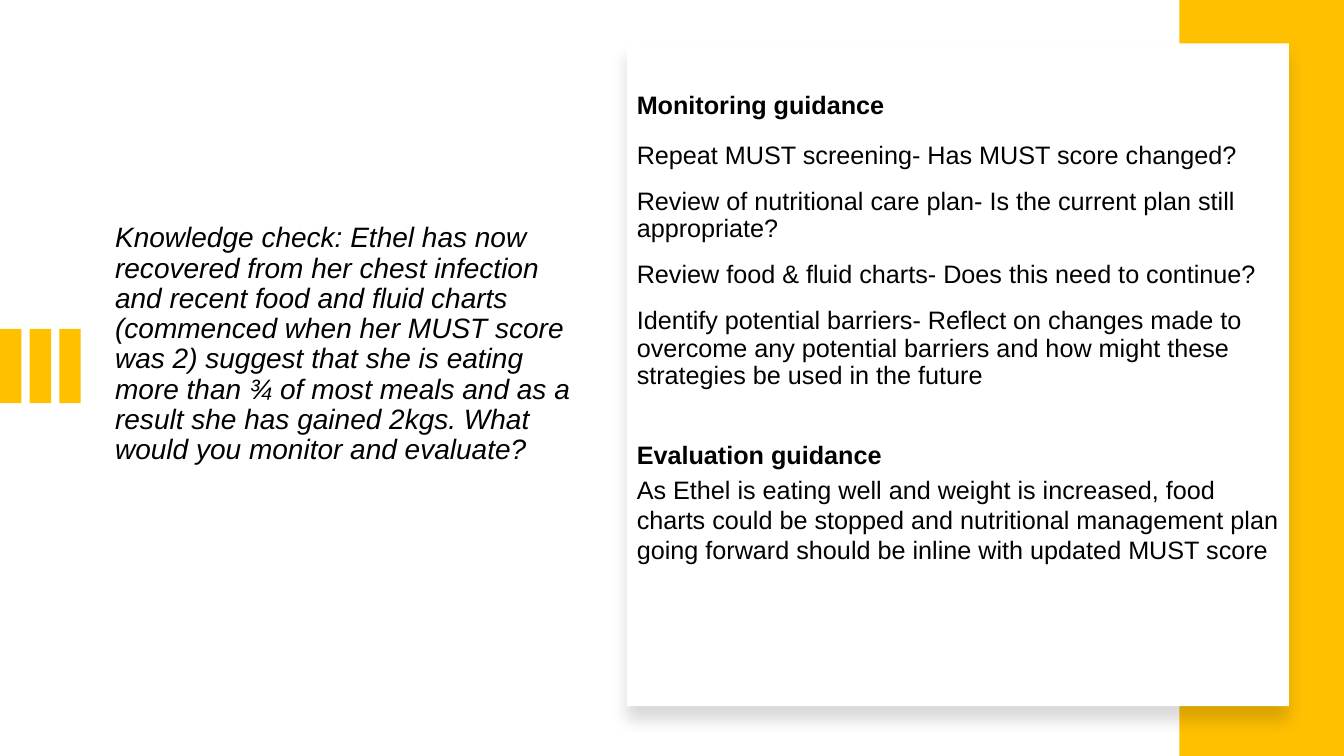
from lxml import etree
from pptx import Presentation
from pptx.dml.color import RGBColor
from pptx.enum.shapes import MSO_SHAPE as SHAPE
from pptx.enum.text import MSO_ANCHOR as ANCHOR, PP_ALIGN as ALIGN
from pptx.oxml import parse_xml
from pptx.oxml.ns import nsdecls, qn
from pptx.util import Pt

AMBER, WHITE, BLACK = "FFC000", "FFFFFF", "000000"
FONT = "Arial"

QUESTION = (
    "Knowledge check: Ethel has now recovered from her chest infection and "
    "recent food and fluid charts (commenced when her MUST score was 2) suggest "
    "that she is eating more than ¾ of most meals and as a result she has gained "
    "2kgs. What would you monitor and evaluate?"
)

# Text, bold, line spacing, space before
GUIDANCE = [
    ("Monitoring guidance", True, 1.0, 10),
    ("Repeat MUST screening- Has MUST score changed?", False, 1.0, 10),
    ("Review of nutritional care plan- Is the current plan still appropriate?",
     False, 0.9, 10),
    ("Review food & fluid charts- Does this need to continue?", False, 0.9, 10),
    ("Identify potential barriers- Reflect on changes made to overcome any "
     "potential barriers and how might these strategies be used in the future",
     False, 0.9, 10),
    ("Evaluation guidance", True, 2.0, 10),
    ("As Ethel is eating well and weight is increased, food charts could be "
     "stopped and nutritional management plan going forward should be inline "
     "with updated MUST score", False, 1.0, 0),
]


def rgb(value):
    return RGBColor.from_string(value)


def set_all(obj, formats):
    for name, value in formats.items():
        setattr(obj, name, value)


def add_rect(shapes, left, top, width, height, color):
    sp = shapes.add_shape(SHAPE.RECTANGLE, Pt(left), Pt(top), Pt(width), Pt(height))
    sp.shadow.inherit = False
    sp.fill.solid()
    sp.fill.fore_color.rgb = rgb(color)
    sp.line.fill.background()
    return sp


def add_soft_shadow(sp):
    effects = sp._element.spPr.find(qn("a:effectLst"))
    shadow = parse_xml(
        f'<a:outerShdw {nsdecls("a")} blurRad="{Pt(11)}" dist="{Pt(10)}" '
        'dir="5400000" algn="t" rotWithShape="0"/>')
    color = etree.SubElement(shadow, qn("a:srgbClr"), val=BLACK)
    etree.SubElement(color, qn("a:alpha"), val="15000")
    effects.append(shadow)


def set_paragraph(p, text, font, spacing):
    set_all(p, {"alignment": ALIGN.LEFT, **spacing})
    r = p.add_run()
    r.text = text
    set_all(r.font, {"name": FONT, **font})
    r.font.color.rgb = rgb(BLACK)


def place_question(s, left, top, width, height):
    title = s.shapes.title
    set_all(title, {"left": Pt(left), "top": Pt(top),
                    "width": Pt(width), "height": Pt(height)})
    tf = title.text_frame
    set_all(tf, {"word_wrap": True, "vertical_anchor": ANCHOR.TOP})
    set_paragraph(tf.paragraphs[0], QUESTION,
                  {"size": Pt(20), "italic": True, "bold": False},
                  {"line_spacing": 0.9, "space_before": Pt(0)})


def add_bars(s, left, top, width, height, count=3):
    bar = 15.3
    pitch = (width - bar) / (count - 1)
    group = s.shapes.add_group_shape()
    for i in range(count):
        add_rect(group.shapes, left + i * pitch, top, bar, height, AMBER)


def add_guidance_card(s, left, top, width, height):
    # Card
    add_soft_shadow(add_rect(s.shapes, left, top, width, height, WHITE))

    # Guidance text
    box = s.shapes.add_textbox(Pt(left), Pt(top + 29.5), Pt(width), Pt(433))
    tf = box.text_frame
    set_all(tf, {"word_wrap": True, "vertical_anchor": ANCHOR.TOP})
    for i, (text, bold, line, before) in enumerate(GUIDANCE):
        p = tf.add_paragraph() if i else tf.paragraphs[0]
        set_paragraph(p, text, {"size": Pt(18), "bold": bold},
                      {"line_spacing": line, "space_before": Pt(before),
                       "space_after": Pt(3.6)})


def build_knowledge_check(prs):
    s = prs.slides.add_slide(prs.slide_layouts[5])
    place_question(s, 75, 156.2, 350, 188)
    add_bars(s, 0, 235, 57.7, 53)
    # Right-hand band
    add_rect(s.shapes, 842.4, 0, 117.6, 540, AMBER)
    add_guidance_card(s, 447.8, 31, 473, 473.5)


def main():
    prs = Presentation()
    set_all(prs, {"slide_width": Pt(960), "slide_height": Pt(540)})
    build_knowledge_check(prs)
    prs.save("out.pptx")


if __name__ == "__main__":
    main()
